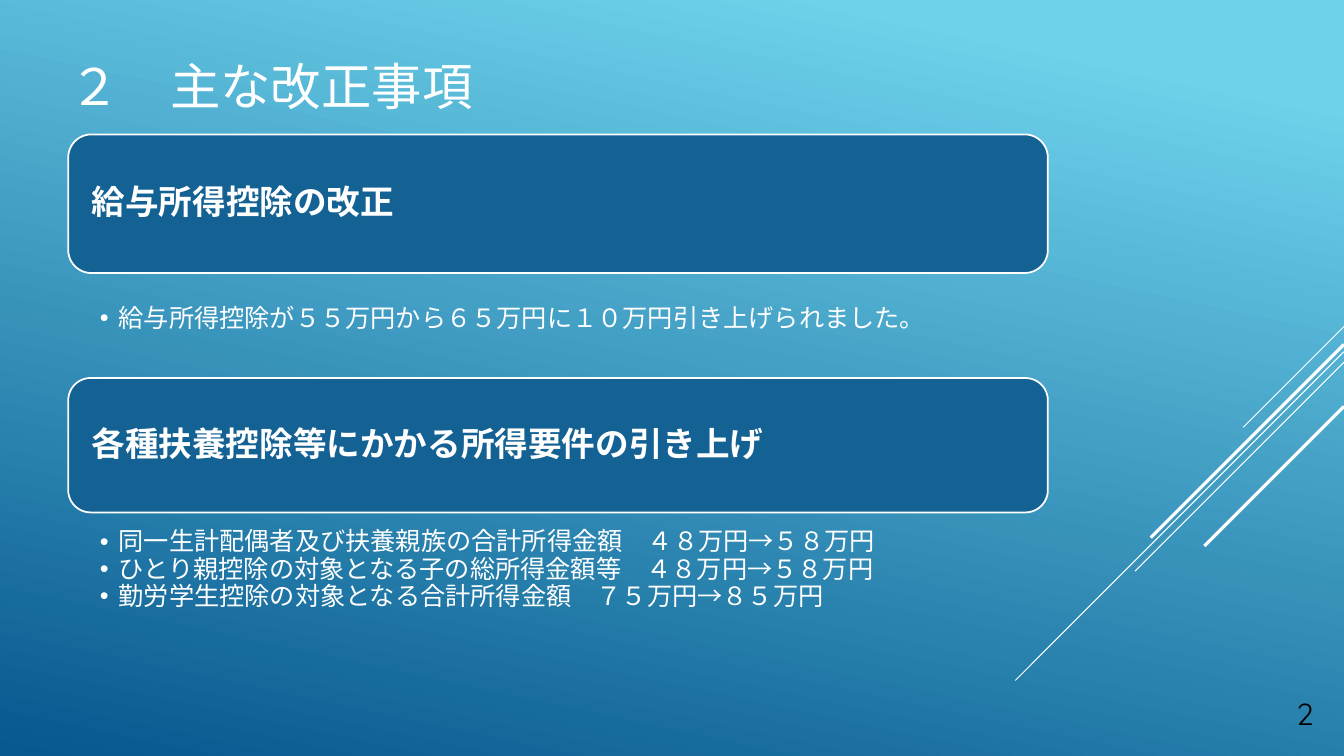
"""Build the slide listing the main tax revision items."""
import pptx
import pptx.dml.color
import pptx.enum.lang
import pptx.enum.shapes
import pptx.enum.text
import pptx.oxml
import pptx.oxml.ns
import pptx.util

EMU_PER_PX = 9525
SLIDE_WIDTH, SLIDE_HEIGHT = 1280, 720
FONT = "Quicksand"
WHITE = pptx.dml.color.RGBColor(0xFF, 0xFF, 0xFF)
BLACK = pptx.dml.color.RGBColor(0x00, 0x00, 0x00)
PANEL_BLUE = pptx.dml.color.RGBColor(0x14, 0x61, 0x94)
SKY = pptx.dml.color.RGBColor(0x6E, 0xD2, 0xEB)
DEEP_BLUE = pptx.dml.color.RGBColor(0x06, 0x58, 0x8E)

PANEL_LEFT, PANEL_WIDTH = 65, 933
LIST_INDENT = 18
TITLE = "２　主な改正事項"
SECTIONS = [
    ("給与所得控除の改正", 128, 132, 288, 80,
     ["給与所得控除が５５万円から６５万円に１０万円引き上げられました。"]),
    ("各種扶養控除等にかかる所得要件の引き上げ", 360, 128, 501, 199,
     ["同一生計配偶者及び扶養親族の合計所得金額　４８万円→５８万円",
      "ひとり親控除の対象となる子の総所得金額等　４８万円→５８万円",
      "勤労学生控除の対象となる合計所得金額　７５万円→８５万円"]),
]
DIAGONALS = [(311, 96, 0.75), (335, 313, 0.75), (345, 199, 0.75),
             (328, 184, 2.25), (387, 133, 2.25)]


def px(length):
    return pptx.util.Emu(length * EMU_PER_PX)


def place(shape, left, top, width, height):
    shape.left, shape.top = px(left), px(top)
    shape.width, shape.height = px(width), px(height)


def set_frame(frame, anchor, left=10, top=5, right=10, bottom=5):
    frame.word_wrap = True
    frame.auto_size = pptx.enum.text.MSO_AUTO_SIZE.NONE
    frame.vertical_anchor = anchor
    frame.margin_left, frame.margin_right = px(left), px(right)
    frame.margin_top, frame.margin_bottom = px(top), px(bottom)


def write(paragraph, text, size, color=WHITE, bold=False,
          align=pptx.enum.text.PP_ALIGN.LEFT):
    paragraph.alignment = align
    paragraph.space_before = paragraph.space_after = pptx.util.Pt(0)
    run = paragraph.add_run()
    run.text = text
    run.font.size = pptx.util.Pt(size)
    run.font.bold = bold
    run.font.color.rgb = color
    run.font.name = FONT
    run.font.language_id = pptx.enum.lang.MSO_LANGUAGE_ID.JAPANESE
    latin = run.font._element.find(pptx.oxml.ns.qn("a:latin"))
    east_asian = pptx.oxml.parse_xml(
        f'<a:ea {pptx.oxml.ns.nsdecls("a")} typeface="{FONT}"/>')
    latin.addnext(east_asian)


def paint_background(slide):
    fill = slide.background.fill
    fill.gradient()
    fill.gradient_angle = 258
    for stop, color, position in zip(
            fill.gradient_stops, (SKY, DEEP_BLUE), (0.1, 1)):
        stop.color.rgb = color
        stop.position = position


def add_diagonal(slide, top, reach, weight):
    diagonal = slide.shapes.add_connector(
        pptx.enum.shapes.MSO_CONNECTOR.STRAIGHT,
        px(SLIDE_WIDTH), px(top), px(SLIDE_WIDTH - reach), px(top + reach))
    diagonal.line.color.rgb = WHITE
    diagonal.line.width = pptx.util.Pt(weight)
    diagonal._element.spPr.append(pptx.oxml.parse_xml(
        f'<a:effectLst {pptx.oxml.ns.nsdecls("a")}/>'))


def fill_title(title):
    place(title, 56, 45, 902, 72)
    set_frame(title.text_frame, pptx.enum.text.MSO_ANCHOR.MIDDLE)
    write(title.text_frame.paragraphs[0], TITLE, 36)


def add_heading(slide, text, top, height):
    panel = slide.shapes.add_shape(
        pptx.enum.shapes.MSO_SHAPE.ROUNDED_RECTANGLE,
        px(PANEL_LEFT), px(top), px(PANEL_WIDTH), px(height))
    panel.shadow.inherit = False
    panel.fill.solid()
    panel.fill.fore_color.rgb = PANEL_BLUE
    panel.line.color.rgb = WHITE
    panel.line.width = pptx.util.Pt(1.25)
    set_frame(panel.text_frame, pptx.enum.text.MSO_ANCHOR.MIDDLE, left=16)
    heading = panel.text_frame.paragraphs[0]
    heading.line_spacing = 0.9
    write(heading, text, 24, bold=True)


def fill_list(body, items, top, height):
    place(body, PANEL_LEFT, top, PANEL_WIDTH, height)
    frame = body.text_frame
    set_frame(frame, pptx.enum.text.MSO_ANCHOR.TOP, 30, 3, 13, 3)
    for index, item in enumerate(items):
        paragraph = frame.add_paragraph() if index else frame.paragraphs[0]
        paragraph.line_spacing = 0.9
        write(paragraph, item, 18)
        properties = paragraph._p.get_or_add_pPr()
        properties.set("marL", str(px(LIST_INDENT)))
        properties.set("indent", str(-px(LIST_INDENT)))


def add_page_number(slide):
    number = slide.shapes.add_textbox(px(1189), px(664), px(72), px(38))
    set_frame(number.text_frame, pptx.enum.text.MSO_ANCHOR.BOTTOM)
    write(number.text_frame.paragraphs[0], "2", 21.7, BLACK,
          align=pptx.enum.text.PP_ALIGN.RIGHT)


def main():
    deck = pptx.Presentation()
    deck.slide_width, deck.slide_height = px(SLIDE_WIDTH), px(SLIDE_HEIGHT)
    slide = deck.slides.add_slide(deck.slide_layouts.get_by_name("Two Content"))
    paint_background(slide)
    for diagonal in DIAGONALS:
        add_diagonal(slide, *diagonal)
    title, *bodies = slide.placeholders
    fill_title(title)
    for body, section in zip(bodies, SECTIONS):
        heading, top, height, list_top, list_height, items = section
        add_heading(slide, heading, top, height)
        fill_list(body, items, list_top, list_height)
    add_page_number(slide)
    deck.save("out.pptx")


if __name__ == "__main__":
    main()
